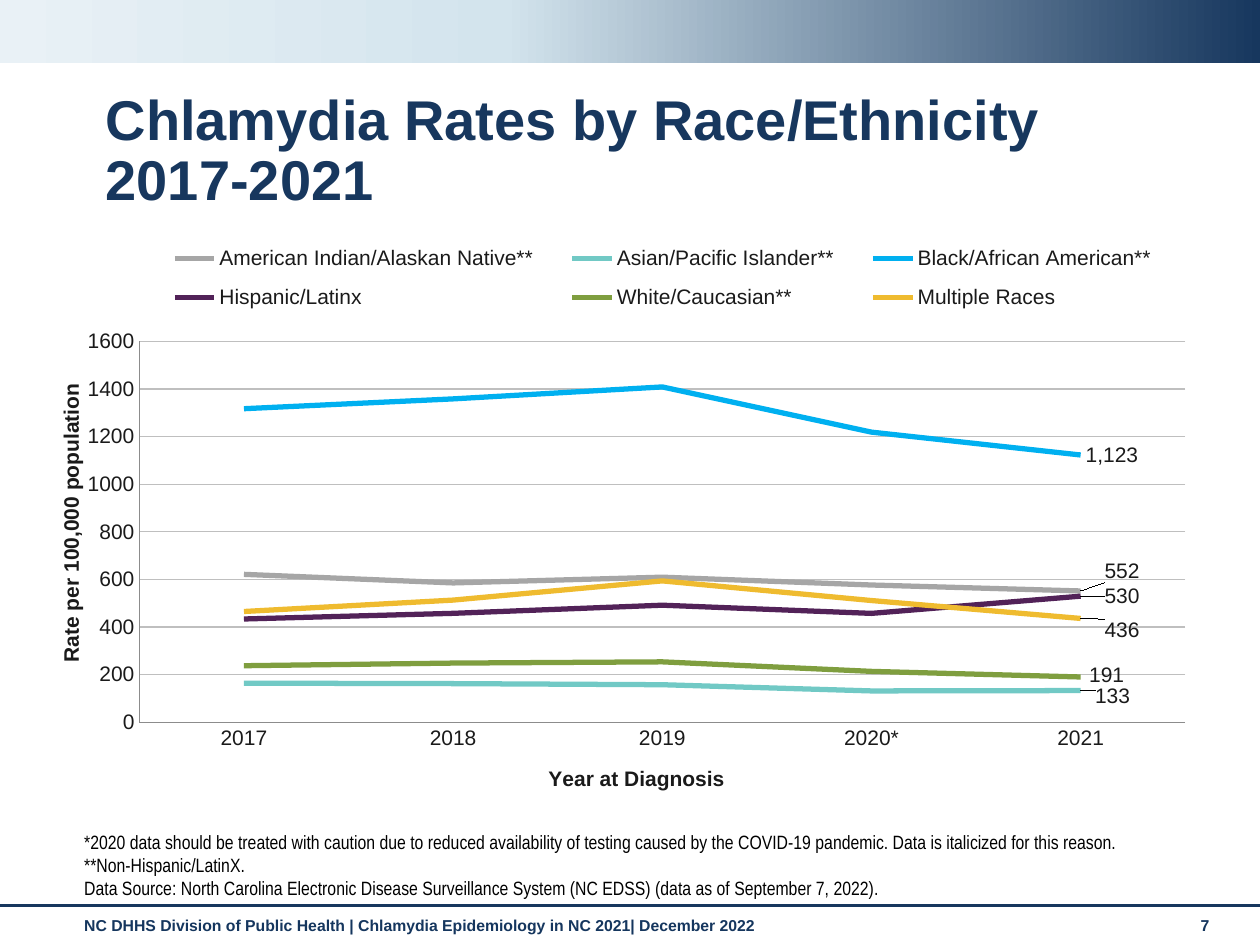
from pptx import Presentation
from pptx.chart.data import CategoryChartData
from pptx.dml.color import RGBColor
from pptx.enum.chart import XL_CHART_TYPE, XL_LABEL_POSITION, XL_LEGEND_POSITION, XL_TICK_MARK
from pptx.enum.shapes import MSO_CONNECTOR, MSO_SHAPE
from pptx.enum.text import MSO_ANCHOR
from pptx.oxml import parse_xml
from pptx.oxml.ns import nsdecls, qn
from pptx.util import Inches, Pt

NAVY, INK, GRID, AXIS = "17375E", "1A1A1A", "BFBFBF", "8C8C8C"

YEARS = ["2017", "2018", "2019", "2020*", "2021"]
# Name, colour, rates, shift of the last label in percent of the chart
SERIES = [
    ("American Indian/Alaskan Native**", "A6A6A6", [621.5, 585.4, 609.6, 576.7, 551.7], (1.6, -3.3)),
    ("Asian/Pacific Islander**", "71C9C5", [164.5, 162.5, 157.9, 131.9, 133.4], (0.8, 0.9)),
    ("Black/African American**", "00B0F0", [1317.2, 1358.4, 1408.7, 1218.8, 1122.9], None),
    ("Hispanic/Latinx", "522258", [434.1, 457.7, 491.9, 457.5, 529.9], (1.6, 0)),
    ("White/Caucasian**", "7F9E3F", [237.7, 248.8, 254, 214, 190.6], (0.3, -0.3)),
    ("Multiple Races", "EFBB2F", [465.4, 513.3, 593.9, 511.6, 436.4], (1.6, 2)),
]
FOOTNOTES = [
    "*2020 data should be treated with caution due to reduced availability of testing caused by "
    "the COVID-19 pandemic. Data is italicized for this reason.",
    "**Non-Hispanic/LatinX.",
    "Data Source: North Carolina Electronic Disease Surveillance System (NC EDSS) "
    "(data as of September 7, 2022).",
]


def color(value):
    return RGBColor.from_string(value)


def format_line(line, value, width):
    line.color.rgb = color(value)
    line.width = Pt(width)


def write(frame, lines, size=9, font="Arial", fill=NAVY, bold=False, spacing=None):
    for index, line in enumerate(lines):
        paragraph = frame.add_paragraph() if index else frame.paragraphs[0]
        paragraph.text = line
        if spacing:
            paragraph.line_spacing = spacing
        for run in paragraph.runs:
            run.font.size, run.font.name, run.font.bold = Pt(size), font, bold
            run.font.color.rgb = color(fill)


def set_layout(parent, after, modes, **percents):
    """Place a chart part by percents of the chart, right after the named child."""
    old = parent.find(qn("c:layout"))
    if old is not None:
        parent.remove(old)
    places = modes | {name: round(percent / 100, 4) for name, percent in percents.items()}
    items = "".join(f'<c:{name} val="{value}"/>' for name, value in places.items())
    layout = parse_xml(f'<c:layout {nsdecls("c")}><c:manualLayout>{items}</c:manualLayout></c:layout>')
    if after:
        parent.find(qn(after)).addnext(layout)
    else:
        parent.insert(0, layout)


EDGE = {"xMode": "edge", "yMode": "edge"}
INNER_EDGE = {"layoutTarget": "inner"} | EDGE


class Deck:
    """Lengths are columns and rows of a grid of 100 by 75 cells."""

    def __init__(self):
        self.presentation = Presentation()
        self.presentation.slide_width, self.presentation.slide_height = Inches(10), Inches(7.5)
        self.cell = self.presentation.slide_width / 100
        self.slide = self.presentation.slides.add_slide(self.presentation.slide_layouts[6])

    def place(self, *lengths):
        return [round(length * self.cell) for length in lengths]

    def text(self, box, lines, anchor=MSO_ANCHOR.TOP, **style):
        frame = self.slide.shapes.add_textbox(*self.place(*box)).text_frame
        frame.word_wrap = True
        frame.vertical_anchor = anchor
        write(frame, lines, **style)

    def gradient_band(self, box, stops):
        shape = self.slide.shapes.add_shape(MSO_SHAPE.RECTANGLE, *self.place(*box))
        shape.shadow.inherit = False
        shape.line.fill.background()
        shape.fill.gradient()
        shape.fill.gradient_angle = 180
        stop_list = shape.fill._fill._gradFill.find(qn("a:gsLst"))
        for old in list(stop_list):
            stop_list.remove(old)
        for percent, value in stops:
            stop_list.append(parse_xml(
                f'<a:gs {nsdecls("a")} pos="{percent * 1000}"><a:srgbClr val="{value}"/></a:gs>'))

    def rule(self, start, end, value, width):
        connector = self.slide.shapes.add_connector(MSO_CONNECTOR.STRAIGHT, *self.place(*start, *end))
        format_line(connector.line, value, width)
        connector._element.spPr.append(parse_xml(f'<a:effectLst {nsdecls("a")}/>'))

    def line_chart(self, box, categories, series_rows):
        data = CategoryChartData(number_format="#,##0")
        data.categories = categories
        for name, _, values, _ in series_rows:
            data.add_series(name, values)
        chart = self.slide.shapes.add_chart(XL_CHART_TYPE.LINE, *self.place(*box), data).chart
        chart.has_title = False
        chart.font.size, chart.font.name = Pt(12), "Arial"
        chart.font.color.rgb = color(INK)
        set_layout(chart._chartSpace.chart.plotArea, None, INNER_EDGE, x=8.7, y=21.1, w=88.5, h=63.8)
        for series, (_, value, _, shift) in zip(chart.plots[0].series, series_rows):
            series.smooth = False
            format_line(series.format.line, value, 3)
            self.end_label(series, len(categories) - 1, shift)
        return chart

    def end_label(self, series, index, shift):
        label = series.points[index].data_label
        label.position = XL_LABEL_POSITION.RIGHT
        series.data_labels.show_value = False
        labels = series.data_labels._element
        if shift:
            set_layout(labels.find(qn("c:dLbl")), "c:idx", {}, x=shift[0], y=shift[1])
        # Leader lines from the points to the shifted labels
        labels.append(parse_xml(
            f'<c:extLst {nsdecls("c")}><c:ext uri="{{CE6537A1-D6FC-4f65-9D91-7224C49458BB}}" '
            'xmlns:c15="http://schemas.microsoft.com/office/drawing/2012/chart">'
            '<c15:showLeaderLines val="1"/></c:ext></c:extLst>'))

    def legend(self, chart, **percents):
        chart.has_legend = True
        chart.legend.position = XL_LEGEND_POSITION.TOP
        chart.legend.include_in_layout = False
        set_layout(chart.legend._element, "c:legendPos", EDGE, **percents)

    def axis(self, axis, title, **percents):
        axis.major_tick_mark = axis.minor_tick_mark = XL_TICK_MARK.NONE
        format_line(axis.format.line, AXIS, 0.75)
        write(axis.axis_title.text_frame, [title], size=12, fill=INK, bold=True)
        set_layout(axis.axis_title._element, "c:tx", EDGE, **percents)


def main():
    deck = Deck()

    # Header band and title
    deck.gradient_band((0, 0, 100, 5), [(0, NAVY), (60, "D3E4ED"), (100, "E9F1F6")])
    deck.text((7.4, 6.8, 85.8, 6), ["Chlamydia Rates by Race/Ethnicity\v2017-2021"],
              size=32, bold=True, spacing=0.9)

    # Rates by year
    chart = deck.line_chart((2.9, 17.1, 93.8, 47.4), YEARS, SERIES)
    deck.legend(chart, x=9, y=2.5, w=88, h=16)
    deck.axis(chart.category_axis, "Year at Diagnosis", x=43, y=91.5)
    rates = chart.value_axis
    deck.axis(rates, "Rate per 100,000 population", x=1.5, y=27.5)
    rates.minimum_scale, rates.maximum_scale, rates.major_unit = 0, 1600, 200
    rates.tick_labels.number_format = "0"
    rates.tick_labels.number_format_is_linked = False
    format_line(rates.major_gridlines.format.line, GRID, 0.75)

    # Footnotes
    deck.text((5.7, 68.3, 91, 3.6), FOOTNOTES, MSO_ANCHOR.BOTTOM,
              size=11, font="Arial Narrow", fill="000000")

    # Footer
    deck.rule((0, 71.9), (100, 71.9), NAVY, 1.75)
    deck.text((5.7, 72.2, 87.4, 2.9),
              ["NC DHHS Division of Public Health | Chlamydia Epidemiology in NC 2021| December 2022"],
              fill="15365E", bold=True)
    deck.text((94.3, 72.2, 4.4, 2.9), ["7"], fill="15365E", bold=True)

    deck.presentation.save("out.pptx")


if __name__ == "__main__":
    main()
